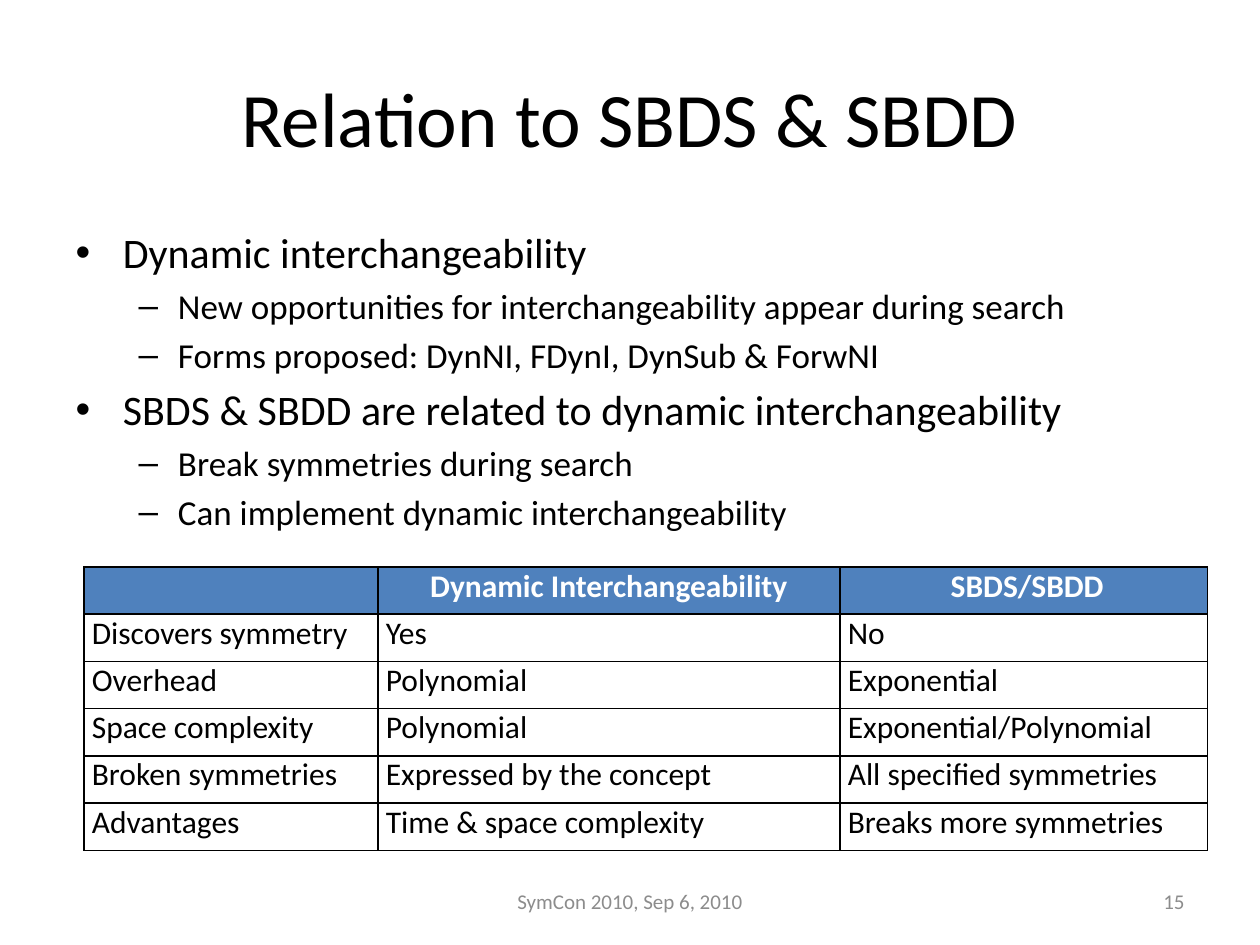
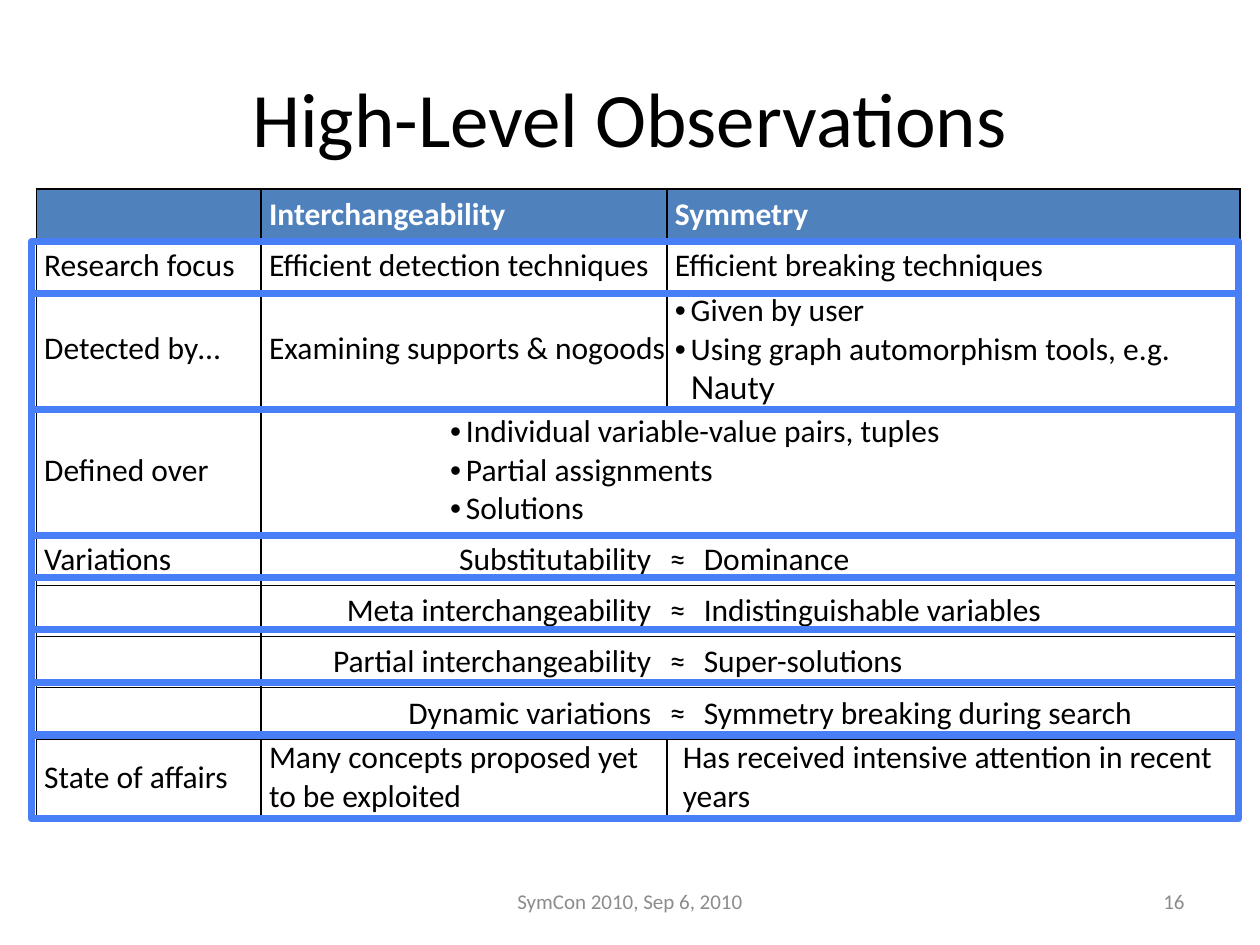
from dataclasses import dataclass
from itertools import accumulate

from lxml import etree
from pptx import Presentation
from pptx.dml.color import RGBColor
from pptx.enum.shapes import MSO_SHAPE
from pptx.enum.text import MSO_ANCHOR, PP_ALIGN
from pptx.oxml.ns import qn
from pptx.util import Pt

LEFT, CENTER, RIGHT = PP_ALIGN.LEFT, PP_ALIGN.CENTER, PP_ALIGN.RIGHT
TOP, MIDDLE = MSO_ANCHOR.TOP, MSO_ANCHOR.MIDDLE
RECTANGLE = MSO_SHAPE.RECTANGLE
TITLE_AND_BODY, TITLE_ONLY = 1, 5
ALL_SIDES = "LRTB"
FOOTER = "SymCon 2010, Sep 6, 2010"


@dataclass(frozen=True)
class Theme:
    """Colours, fonts and type sizes shared by the slides."""
    font: str = "Calibri"
    tool_font: str = "Lato"
    ink: str = "000000"
    paper: str = "FFFFFF"
    header: str = "4F81BD"
    frame: str = "487FF7"
    muted: str = "8C8C8C"
    title: int = 44
    levels: tuple = (24, 20)
    cell: int = 18
    footer: int = 12
    border: int = 1
    frame_width: int = 4


@dataclass(frozen=True)
class Style:
    """Paragraph layout inside a table cell."""
    align: int = LEFT
    indent: float = 4.5
    hang: float = 0
    bullet: str = ""


THEME = Theme()
PLAIN = Style()
CENTERED = Style(align=CENTER, indent=0)
FLUSH = Style(indent=0)
RIGHT_SIDE = Style(align=RIGHT)
INSET = Style(indent=9)
BULLETS = Style(indent=13.5, hang=9, bullet="•")
DEEP_BULLETS = Style(indent=117, hang=9, bullet="•")


def rgb(color):
    """Turn a hex string into a colour."""
    return RGBColor.from_string(color)


def add_run(p, text, size, color=THEME.ink, bold=False, font=THEME.font):
    """Append one formatted run to a paragraph."""
    r = p.add_run()
    r.text = text
    r.font.name, r.font.size, r.font.bold = font, Pt(size), bold
    r.font.color.rgb = rgb(color)


def place(shape, box):
    """Move a shape to a box given in points."""
    shape.left, shape.top, shape.width, shape.height = map(Pt, box)


def set_title(s, text, box=(36, 21.6, 648, 90)):
    """Fill the title placeholder."""
    place(s.shapes.title, box)
    tf = s.shapes.title.text_frame
    tf.vertical_anchor = MIDDLE
    p = tf.paragraphs[0]
    p.alignment = CENTER
    add_run(p, text, THEME.title)


def set_body(s, items, box):
    """Fill the body placeholder with (level, text) items."""
    body = s.placeholders[1]
    place(body, box)
    tf = body.text_frame
    for i, (level, text) in enumerate(items):
        p = tf.add_paragraph() if i else tf.paragraphs[0]
        p.level = level
        add_run(p, text, THEME.levels[level])


def add_label(s, text, box, align):
    """Add one small footer text."""
    shape = s.shapes.add_textbox(*map(Pt, box))
    tf = shape.text_frame
    tf.word_wrap, tf.vertical_anchor = True, MIDDLE
    p = tf.paragraphs[0]
    p.alignment = align
    add_run(p, text, THEME.footer, THEME.muted)


def add_footer(s, number, top=500.5, height=28.75):
    """Add the event line and the slide number."""
    add_label(s, str(number), (516, top, 168, height), RIGHT)
    add_label(s, FOOTER, (246, top, 228, height), CENTER)


def set_borders(cell, sides):
    """Draw the named cell sides and hide the others."""
    tc_pr = cell._tc.get_or_add_tcPr()
    for side in ALL_SIDES:
        ln = etree.SubElement(tc_pr, qn(f"a:ln{side}"), w=str(Pt(THEME.border)))
        if side in sides:
            fill = etree.SubElement(ln, qn("a:solidFill"))
            etree.SubElement(fill, qn("a:srgbClr"), val=THEME.ink)
        else:
            etree.SubElement(ln, qn("a:noFill"))


def style_paragraph(p, style):
    """Apply alignment, indents and bullet to a cell paragraph."""
    p.alignment = style.align
    p_pr = p._p.get_or_add_pPr()
    p_pr.set("marL", str(Pt(style.indent)))
    p_pr.set("indent", str(Pt(-style.hang)))
    if style.bullet:
        etree.SubElement(p_pr, qn("a:buFont"), typeface="Arial")
        etree.SubElement(p_pr, qn("a:buChar"), char=style.bullet)


def add_grid(s, origin, widths, heights, anchor):
    """Add a bordered table with a coloured first row."""
    box = (*origin, sum(widths), sum(heights))
    shape = s.shapes.add_table(len(heights), len(widths), *map(Pt, box))
    table = shape.table
    table.horz_banding = False
    for col, width in zip(table.columns, widths):
        col.width = Pt(width)
    for row, height in zip(table.rows, heights):
        row.height = Pt(height)
    for cell in table.iter_cells():
        cell.margin_left = cell.margin_right = 0
        cell.margin_top = cell.margin_bottom = 0
        cell.vertical_anchor = anchor
    return table


def fill_cell(table, row, col, lines, style=PLAIN, span=1, sides=ALL_SIDES):
    """Write lines, each a list of (text, font) runs or a string, in a cell."""
    cell = table.cell(row, col)
    if span > 1:
        cell.merge(table.cell(row, col + span - 1))
    for i in range(col, col + span):
        part = table.cell(row, i)
        set_borders(part, sides)
        if row:
            part.fill.background()
        else:
            part.fill.solid()
            part.fill.fore_color.rgb = rgb(THEME.header)
    tf = cell.text_frame
    color = THEME.ink if row else THEME.paper
    for i, line in enumerate(lines):
        p = tf.add_paragraph() if i else tf.paragraphs[0]
        style_paragraph(p, style)
        runs = [(line, THEME.font)] if isinstance(line, str) else line
        for text, font in runs:
            add_run(p, text, THEME.cell, color, not row, font)


def add_frames(s, left, top, width, heights):
    """Stack outlined frames of the given heights."""
    tops = accumulate(heights, initial=top)
    for y, height in zip(tops, heights):
        shape = s.shapes.add_shape(RECTANGLE, *map(Pt, (left, y, width, height)))
        shape.shadow.inherit = False
        shape.fill.background()
        shape.line.color.rgb = rgb(THEME.frame)
        shape.line.width = Pt(THEME.frame_width)


def add_relation_table(s, origin):
    """Compare dynamic interchangeability with SBDS/SBDD."""
    rows = [
        ("", "Dynamic Interchangeability", " SBDS/SBDD"),
        ("Discovers symmetry", "Yes", "No"),
        ("Overhead", "Polynomial", "Exponential"),
        ("Space complexity", "Polynomial", "Exponential/Polynomial"),
        ("Broken symmetries", "Expressed by the concept", "All specified symmetries"),
        ("Advantages", "Time & space complexity", "Breaks more symmetries"),
    ]
    table = add_grid(s, origin, (168, 264, 210), [27] * len(rows), TOP)
    for i, row in enumerate(rows):
        for j, text in enumerate(row):
            fill_cell(table, i, j, [text] if text else [], PLAIN if i else CENTERED)


def add_observation_table(s, origin):
    """Compare interchangeability with symmetry."""
    line = 29.25
    heights = [line, line, 65.9, 73, *[line] * 4, 44]
    table = add_grid(s, origin, (128.5, 223, 9, 21, 306.5), heights, MIDDLE)
    tools = ["Given by user",
             [("Using graph automorphism tools, e.g. ", THEME.font),
              ("Nauty", THEME.tool_font)]]
    pairs = {
        0: ([], ["Interchangeability"], ["Symmetry"], PLAIN),
        1: (["Research focus"], ["Efficient detection techniques"],
            ["Efficient breaking techniques"], PLAIN),
        2: (["Detected by…"], ["Examining supports & nogoods"], tools, BULLETS),
        8: (["State of affairs"], ["Many concepts proposed yet to be exploited"],
            ["Has received intensive attention in recent years"], INSET),
    }
    for row, (label, interchangeability, symmetry, style) in pairs.items():
        fill_cell(table, row, 0, label)
        fill_cell(table, row, 1, interchangeability, span=2)
        fill_cell(table, row, 3, symmetry, style, span=2)
    fill_cell(table, 3, 0, ["Defined over"])
    fill_cell(table, 3, 1, ["Individual variable-value pairs, tuples",
                            "Partial assignments", "Solutions"],
              DEEP_BULLETS, span=4)
    variations = [
        ("Substitutability", "Dominance"),
        ("Meta interchangeability", "Indistinguishable variables"),
        ("Partial interchangeability", "Super-solutions"),
        ("Dynamic variations", "Symmetry breaking during search"),
    ]
    for row, (concept, match) in enumerate(variations, 4):
        fill_cell(table, row, 0, ["Variations"] if row == 4 else [])
        fill_cell(table, row, 1, [concept], RIGHT_SIDE, sides="LTB")
        fill_cell(table, row, 2, ["≈"], CENTERED, span=2, sides="TB")
        fill_cell(table, row, 4, [match], FLUSH, sides="RTB")


def relation_slide(prs):
    """Build the slide on SBDS and SBDD."""
    s = prs.slides.add_slide(prs.slide_layouts[TITLE_AND_BODY])
    set_title(s, "Relation to SBDS & SBDD")
    set_body(s, [
        (0, "Dynamic interchangeability"),
        (1, "New opportunities for interchangeability appear during search"),
        (1, "Forms proposed: DynNI, FDynI, DynSub & ForwNI"),
        (0, "SBDS & SBDD are related to dynamic interchangeability"),
        (1, "Break symmetries during search"),
        (1, "Can implement dynamic interchangeability"),
    ], (36, 126, 648, 372))
    add_relation_table(s, (48, 324))
    add_footer(s, 15)


def observations_slide(prs):
    """Build the slide of high-level observations."""
    s = prs.slides.add_slide(prs.slide_layouts[TITLE_ONLY])
    set_title(s, "High-Level Observations")
    add_observation_table(s, (20.75, 108))
    add_frames(s, 18, 138, 690, [30, 66, 72, 24, 30, 30, 30, 48])
    add_footer(s, 16)


def main():
    """Build and save the presentation."""
    prs = Presentation()
    prs.slide_width, prs.slide_height = Pt(720), Pt(540)
    relation_slide(prs)
    observations_slide(prs)
    prs.save("out.pptx")


if __name__ == "__main__":
    main()
